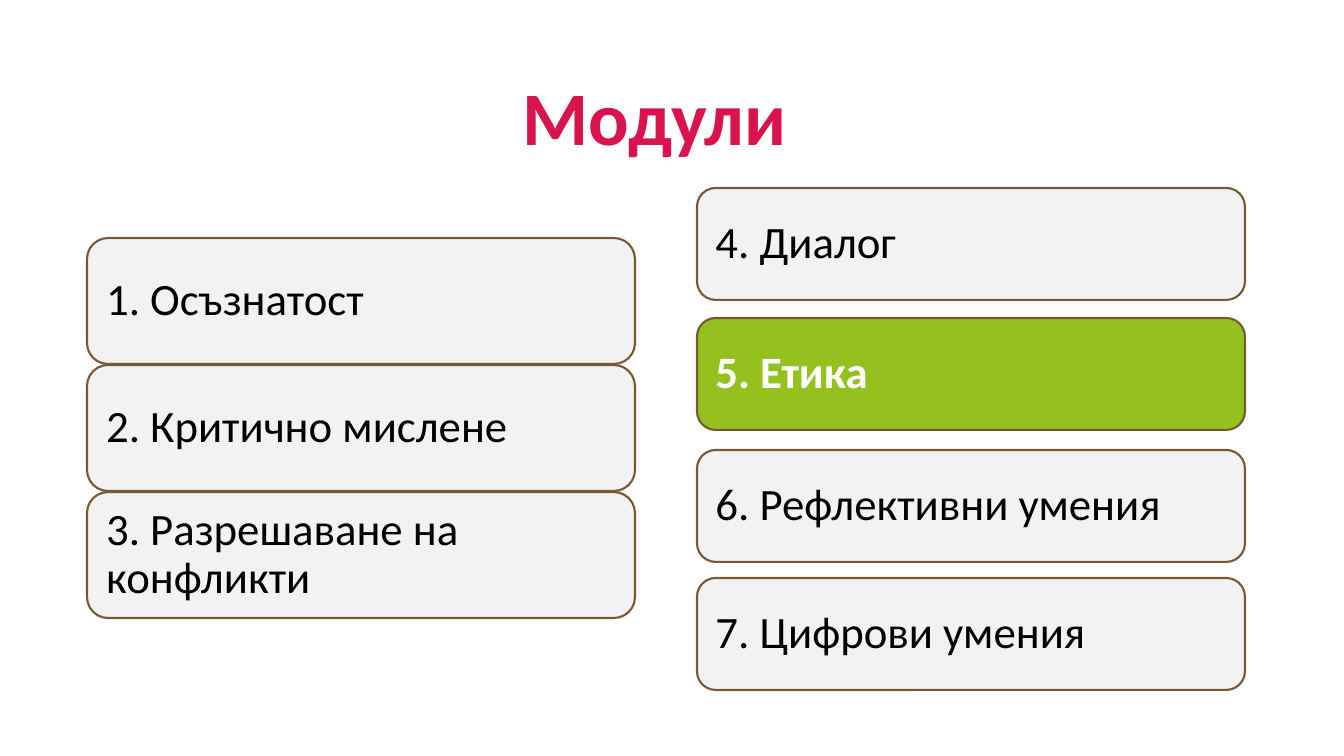
from pptx import Presentation
from pptx.dml.color import RGBColor
from pptx.enum.shapes import MSO_SHAPE as Shape
from pptx.enum.text import MSO_ANCHOR as Anchor, PP_ALIGN as Align
from pptx.util import Emu, Pt

CRIMSON = RGBColor(0xD8, 0x13, 0x4D)
GREEN = RGBColor(0x95, 0xC1, 0x1F)
LIGHT_GREY = RGBColor(0xF2, 0xF2, 0xF2)
BROWN = RGBColor(0x78, 0x58, 0x32)
BLACK = RGBColor(0, 0, 0)
WHITE = RGBColor(0xFF, 0xFF, 0xFF)

EMU_PER_PX = 914400 / 100.8


def px(length):
    return Emu(round(length * EMU_PER_PX))


class ModuleSlide:
    font_name = "Calibri"
    line_spacing = 0.9
    card_padding = 13

    def __init__(self, presentation):
        self.slide = presentation.slides.add_slide(presentation.slide_layouts[6])

    def set_label(self, frame, text, size, color, bold, align, anchor):
        frame.word_wrap = True
        frame.vertical_anchor = anchor
        frame.text = text
        paragraph = frame.paragraphs[0]
        paragraph.alignment = align
        paragraph.line_spacing = self.line_spacing
        font = paragraph.runs[0].font
        font.name = self.font_name
        font.size = Pt(size)
        font.bold = bold
        font.color.rgb = color

    def title(self, text, left, top, width, height):
        heading = self.slide.shapes.add_textbox(px(left), px(top), px(width), px(height))
        self.set_label(heading.text_frame, text, 54, CRIMSON, True, Align.CENTER, Anchor.BOTTOM)

    def card(self, text, left, top, width, height, current=False):
        module = self.slide.shapes.add_shape(
            Shape.ROUNDED_RECTANGLE, px(left), px(top), px(width), px(height))
        module.shadow.inherit = False
        module.fill.solid()
        module.fill.fore_color.rgb = GREEN if current else LIGHT_GREY
        module.line.color.rgb = BROWN
        module.line.width = Pt(1.5)
        frame = module.text_frame
        frame.margin_left = frame.margin_right = px(self.card_padding)
        frame.margin_top = frame.margin_bottom = px(self.card_padding)
        self.set_label(frame, text, 32, WHITE if current else BLACK, current,
                       Align.LEFT, Anchor.MIDDLE)


CARD_WIDTH = 548
CURRENT_MODULE = "5. Етика"
COLUMNS = [
    (87, 126, [
        (238, "1. Осъзнатост"),
        (365, "2. Критично мислене"),
        (492, "3. Разрешаване на конфликти"),
    ]),
    (697, 112, [
        (188, "4. Диалог"),
        (318, CURRENT_MODULE),
        (450, "6. Рефлективни умения"),
        (578, "7. Цифрови умения"),
    ]),
]


def main():
    presentation = Presentation()
    presentation.slide_width = px(1344)
    presentation.slide_height = px(756)
    page = ModuleSlide(presentation)
    page.title("Модули", 1, -30, 1307, 197)
    for left, height, modules in COLUMNS:
        for top, module in modules:
            page.card(module, left, top, CARD_WIDTH, height, module == CURRENT_MODULE)
    presentation.save("out.pptx")


if __name__ == "__main__":
    main()
